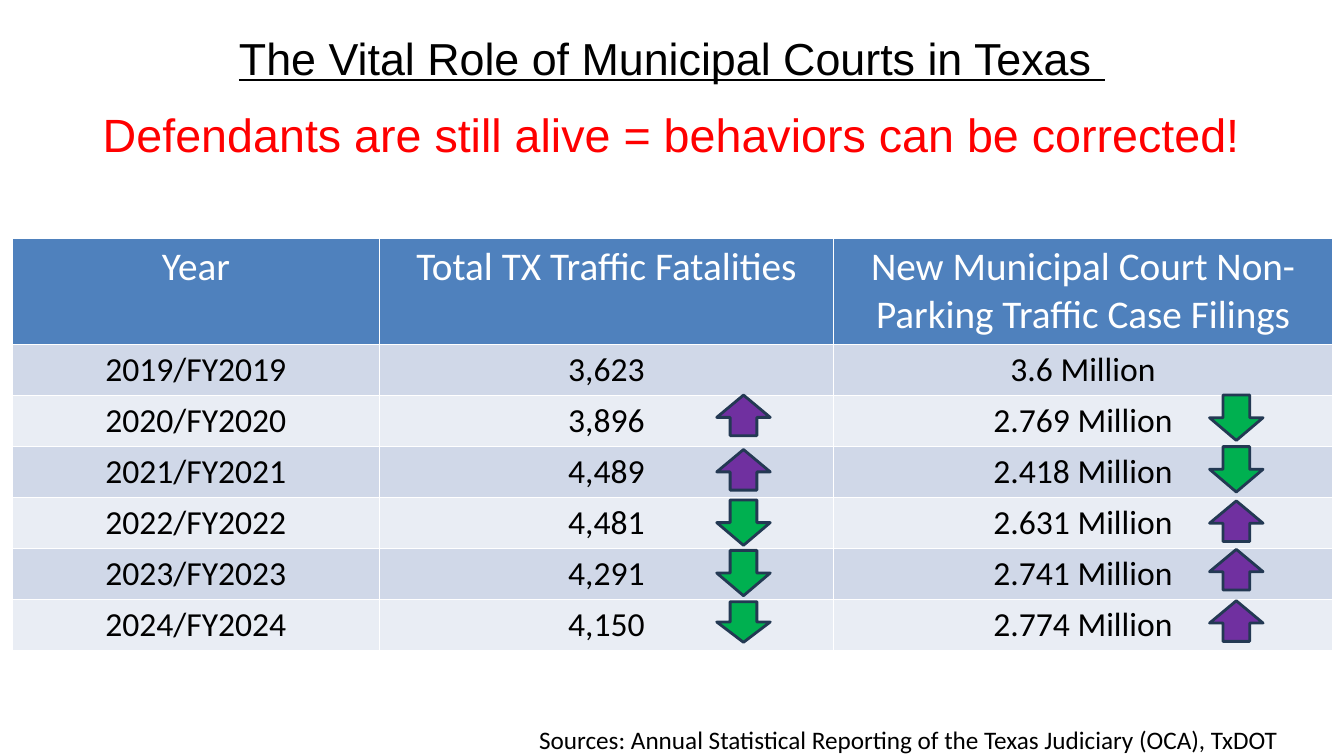
"""Build a slide on Texas traffic deaths and municipal court filings."""
from lxml import etree
from pptx import Presentation
from pptx.dml.color import RGBColor
from pptx.enum.shapes import MSO_SHAPE
from pptx.enum.text import MSO_ANCHOR, PP_ALIGN
from pptx.oxml.ns import qn
from pptx.util import Pt

TITLE = "The Vital Role of Municipal Courts in Texas "
CLAIM = "Defendants are still alive = behaviors can be corrected!"
SOURCE = "Sources: Annual Statistical Reporting of the Texas Judiciary (OCA), TxDOT"
HEADS = ["Year", "Total TX Traffic Fatalities",
         "New Municipal Court Non-Parking Traffic Case Filings"]
DATA = [
    (2019, 3623, 3.6),
    (2020, 3896, 2.769),
    (2021, 4489, 2.418),
    (2022, 4481, 2.631),
    (2023, 4291, 2.741),
    (2024, 4150, 2.774),
]
COLORS = {"black": "000000", "white": "FFFFFF", "red": "FF0000",
          "head": "4F81BD", "odd": "D0D8E8", "even": "E9EDF4",
          "rise": "7030A0", "fall": "00B050", "edge": "233953"}

LEFT, TOP = 8.9, 170
WIDTHS = [262, 324.5, 356.5]
HEAD_H, ROW_H = 76, 36.5
ARROWS = {1: (512, [282.2, 321.1, 357.1, 393.1, 429.8]),
          2: (864, [282.2, 319, 357.8, 392.4, 429.1])}
ARROW_W, RISE_H, FALL_H = 38.2, 29, 32.4
UP, DOWN = MSO_SHAPE.UP_ARROW, MSO_SHAPE.DOWN_ARROW
CENTER, START = PP_ALIGN.CENTER, PP_ALIGN.LEFT
MIDDLE, UPPER = MSO_ANCHOR.MIDDLE, MSO_ANCHOR.TOP


def color(name):
    return RGBColor.from_string(COLORS[name])


def write(frame, text, size, font="Calibri", tint="black", align=CENTER,
          anchor=UPPER, line=False, pad=3.6):
    frame.word_wrap = True
    frame.vertical_anchor = anchor
    frame.margin_top = frame.margin_bottom = Pt(pad)
    para = frame.paragraphs[0]
    para.alignment = align
    run = para.add_run()
    run.text = text
    run.font.size = Pt(size)
    run.font.name = font
    run.font.underline = line
    run.font.color.rgb = color(tint)


def add_text(slide, box, text, size, **style):
    shape = slide.shapes.add_textbox(*map(Pt, box))
    write(shape.text_frame, text, size, **style)


def add_rules(cell):
    props = cell._tc.get_or_add_tcPr()
    for spot, side in enumerate("LRTB"):
        rule = etree.Element(qn(f"a:ln{side}"), w=str(Pt(1)))
        fill = etree.SubElement(rule, qn("a:solidFill"))
        etree.SubElement(fill, qn("a:srgbClr"), val=COLORS["white"])
        props.insert(spot, rule)


def add_grid(slide):
    rows = [HEADS] + [(f"{year}/FY{year}", f"{deaths:,}", f"{cases} Million")
                      for year, deaths, cases in DATA]
    high = HEAD_H + ROW_H * len(DATA)
    table = slide.shapes.add_table(len(rows), len(HEADS), Pt(LEFT), Pt(TOP),
                                   Pt(sum(WIDTHS)), Pt(high)).table
    for col, width in zip(table.columns, WIDTHS):
        col.width = Pt(width)
    for i, row in enumerate(rows):
        table.rows[i].height = Pt(ROW_H if i else HEAD_H)
        shade = ("odd" if i % 2 else "even") if i else "head"
        for j, text in enumerate(row):
            cell = table.cell(i, j)
            cell.fill.solid()
            cell.fill.fore_color.rgb = color(shade)
            write(cell.text_frame, text, 24 if i else 28,
                  tint="black" if i else "white")
            add_rules(cell)


def add_arrow(slide, left, top, rise, high):
    arrow = slide.shapes.add_shape(UP if rise else DOWN, Pt(left), Pt(top),
                                   Pt(ARROW_W), Pt(high))
    if rise:
        arrow.adjustments[1] = 0.55
    arrow.shadow.inherit = False
    arrow.fill.solid()
    arrow.fill.fore_color.rgb = color("rise" if rise else "fall")
    arrow.line.color.rgb = color("edge")
    arrow.line.width = Pt(2)


def main():
    deck = Presentation()
    deck.slide_width, deck.slide_height = Pt(960), Pt(540)
    slide = deck.slides.add_slide(deck.slide_layouts[6])
    add_text(slide, (48, -8, 864, 98), TITLE, 32, font="Arial",
             anchor=MIDDLE, line=True)
    add_text(slide, (48, 72, 864, 66), CLAIM, 33.3, font="Arial", tint="red")
    add_grid(slide)
    add_text(slide, (378, 517.5, 582, 22), SOURCE, 18, align=START, pad=0)
    for j, (left, tops) in ARROWS.items():
        for last, now, top in zip(DATA, DATA[1:], tops):
            rise = now[j] > last[j]
            short = rise or now is DATA[-1]
            add_arrow(slide, left, top, rise, RISE_H if short else FALL_H)
    deck.save("out.pptx")


if __name__ == "__main__":
    main()
